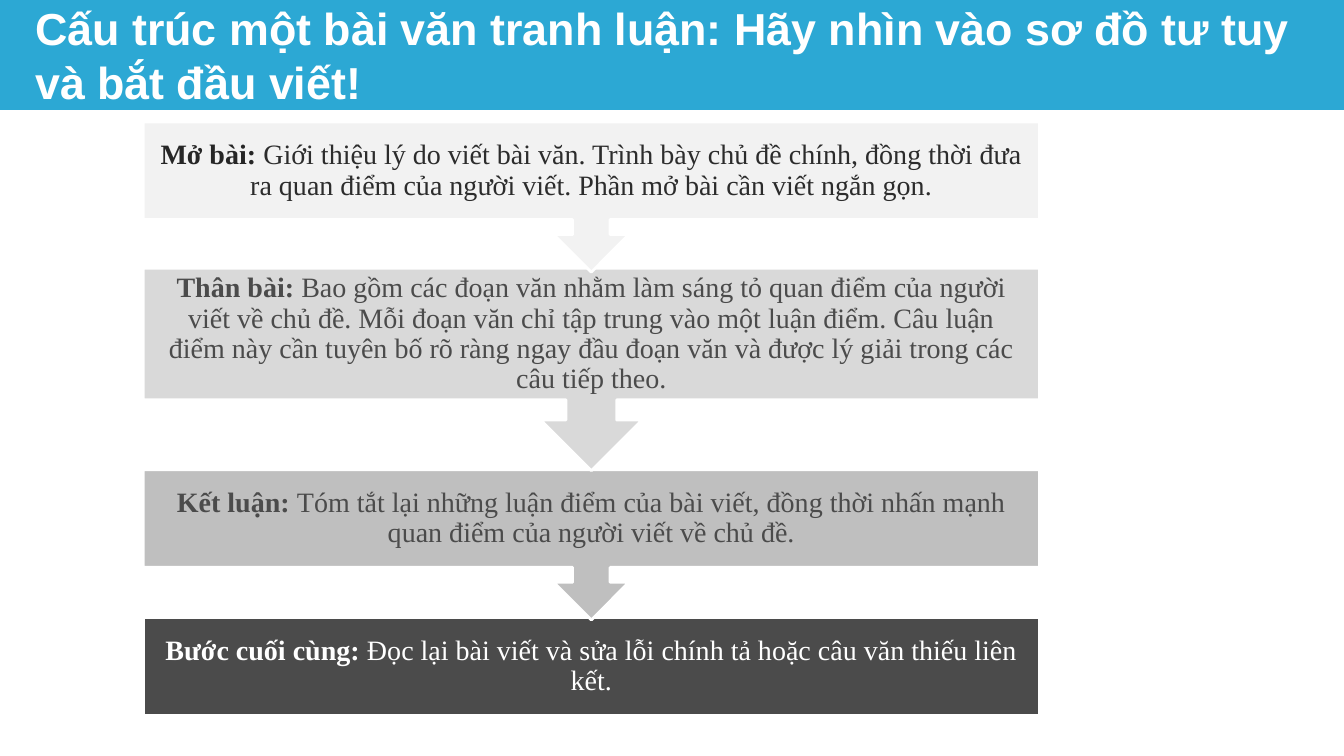
from pptx import Presentation
from pptx.dml.color import RGBColor
from pptx.enum.shapes import MSO_SHAPE
from pptx.enum.text import MSO_ANCHOR, PP_ALIGN
from pptx.util import Inches, Pt

WHITE = RGBColor(0xFF, 0xFF, 0xFF)
BLUE = RGBColor(0x2C, 0xA8, 0xD4)
CHARCOAL = RGBColor(0x4B, 0x4B, 0x4B)
NEAR_BLACK = RGBColor(0x26, 0x26, 0x26)
DARK_GRAY = RGBColor(0x2C, 0x2C, 0x2C)
PALE_GRAY = RGBColor(0xF2, 0xF2, 0xF2)
LIGHT_GRAY = RGBColor(0xD9, 0xD9, 0xD9)
MID_GRAY = RGBColor(0xBF, 0xBF, 0xBF)

TITLE = "Cấu trúc một bài văn tranh luận: Hãy nhìn vào sơ đồ tư tuy và bắt đầu viết!"

# label, body, top, shape height, text height, fill, label colour, body colour
STEPS = [
    ("Mở bài: ",
     "Giới thiệu lý do viết bài văn. Trình bày chủ đề chính, đồng thời đưa ra "
     "quan điểm của người viết. Phần mở bài cần viết ngắn gọn.",
     1.21, 1.49, 0.97, PALE_GRAY, NEAR_BLACK, DARK_GRAY),
    ("Thân bài: ",
     "Bao gồm các đoạn văn nhằm làm sáng tỏ quan điểm của người viết về chủ đề. "
     "Mỗi đoạn văn chỉ tập trung vào một luận điểm. Câu luận điểm này cần tuyên bố "
     "rõ ràng ngay đầu đoạn văn và được lý giải trong các câu tiếp theo.",
     2.66, 2.01, 1.31, LIGHT_GRAY, CHARCOAL, CHARCOAL),
    ("Kết luận: ",
     "Tóm tắt lại những luận điểm của bài viết, đồng thời nhấn mạnh quan điểm của "
     "người viết về chủ đề.",
     4.66, 1.49, 0.97, MID_GRAY, CHARCOAL, CHARCOAL),
    ("Bước cuối cùng: ",
     "Đọc lại bài viết và sửa lỗi chính tả hoặc câu văn thiếu liên kết.",
     6.13, 0.97, 0.97, CHARCOAL, WHITE, WHITE),
]
STEP_LEFT, STEP_WIDTH = 1.42, 8.89

presentation = Presentation()
presentation.slide_width = Inches(13.33)
presentation.slide_height = Inches(7.5)
slide = presentation.slides.add_slide(presentation.slide_layouts[6])


def add_block(kind, left, top, width, height, fill, line=None):
    shape = slide.shapes.add_shape(
        kind, Inches(left), Inches(top), Inches(width), Inches(height))
    shape.shadow.inherit = False
    shape.fill.solid()
    shape.fill.fore_color.rgb = fill
    if line is None:
        shape.line.fill.background()
    else:
        shape.line.color.rgb = line
        shape.line.width = Pt(2)


def add_text(runs, left, top, width, height, *, font, size, align=PP_ALIGN.LEFT,
             spacing=1.0, inset_x=0.1, inset_y=0.05):
    box = slide.shapes.add_textbox(
        Inches(left), Inches(top), Inches(width), Inches(height))
    frame = box.text_frame
    frame.word_wrap = True
    frame.vertical_anchor = MSO_ANCHOR.MIDDLE
    frame.margin_left = frame.margin_right = Inches(inset_x)
    frame.margin_top = frame.margin_bottom = Inches(inset_y)
    paragraph = frame.paragraphs[0]
    paragraph.alignment = align
    paragraph.line_spacing = spacing
    for text, color, bold in runs:
        run = paragraph.add_run()
        run.text = text
        run.font.name = font
        run.font.size = Pt(size)
        run.font.color.rgb = color
        run.font.bold = bold


add_block(MSO_SHAPE.RECTANGLE, 0, 0, 13.33, 1.09, BLUE)
add_text([(TITLE, WHITE, True)], 0.25, 0.12, 12.93, 0.85, font="Arial", size=32)

for label, body, top, height, text_height, fill, label_color, body_color in reversed(STEPS):
    has_arrow = height > text_height
    kind = MSO_SHAPE.DOWN_ARROW_CALLOUT if has_arrow else MSO_SHAPE.RECTANGLE
    add_block(kind, STEP_LEFT, top, STEP_WIDTH, height, fill, WHITE)
    add_text([(label, label_color, True), (body, body_color, False)],
             STEP_LEFT, top, STEP_WIDTH, text_height, font="Times New Roman", size=20,
             align=PP_ALIGN.CENTER, spacing=0.9, inset_x=0.16, inset_y=0.16)

presentation.save("out.pptx")
